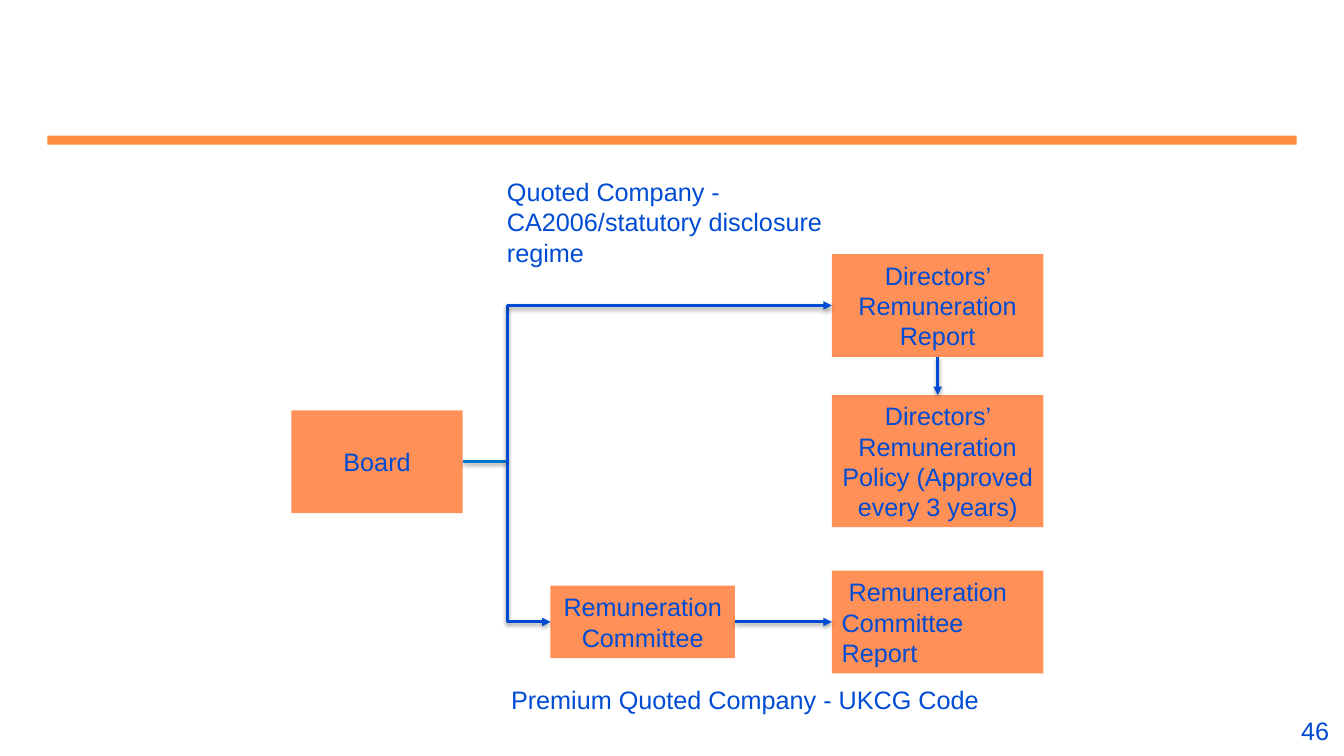
from lxml import etree
from pptx import Presentation
from pptx.dml.color import RGBColor
from pptx.enum.shapes import MSO_CONNECTOR, MSO_SHAPE
from pptx.enum.text import MSO_ANCHOR, PP_ALIGN
from pptx.oxml import parse_xml
from pptx.oxml.ns import nsdecls, qn
from pptx.util import Inches, Pt

BLUE = RGBColor(0x00, 0x4B, 0xD3)
LIGHT_BLUE = RGBColor(0x00, 0x77, 0xC8)
ORANGE = RGBColor(0xFF, 0x90, 0x57)
RULE_ORANGE = RGBColor(0xFF, 0x69, 0x00)
STRAIGHT = MSO_CONNECTOR.STRAIGHT
RECT = MSO_SHAPE.RECTANGLE
LEFT, CENTER, RIGHT = PP_ALIGN.LEFT, PP_ALIGN.CENTER, PP_ALIGN.RIGHT
TOP_SIDE, LEFT_SIDE, BOTTOM_SIDE, RIGHT_SIDE = range(4)

SHADOW = (f'<a:effectLst {nsdecls("a")}><a:outerShdw blurRad="39370" dist="20320" '
          'dir="5400000" rotWithShape="0"><a:srgbClr val="000000">'
          '<a:alpha val="38000"/></a:srgbClr></a:outerShdw></a:effectLst>')


def write(s, text, align, wrap=True):
    tf = s.text_frame
    tf.word_wrap = wrap
    p = tf.paragraphs[0]
    p.alignment = align
    r = p.add_run()
    r.text = text
    r.font.name = "Arial"
    r.font.size = Pt(18)
    r.font.color.rgb = BLUE


def add_line(start, end, color=BLUE, width=2, arrow=False, shadow=True):
    """Draw a line; each end is an (x, y) point or a (box, side) pair to join."""
    points = [(0, 0) if isinstance(e[0], str) else e for e in (start, end)]
    c = prs_slide.shapes.add_connector(
        STRAIGHT, *[Inches(v) for point in points for v in point])
    if isinstance(start[0], str):
        c.begin_connect(boxes[start[0]], start[1])
    if isinstance(end[0], str):
        c.end_connect(boxes[end[0]], end[1])
    c.line.color.rgb = color
    c.line.width = Pt(width)
    if arrow:
        etree.SubElement(c.line._get_or_add_ln(), qn("a:tailEnd"), type="triangle")
    effects = SHADOW if shadow else f'<a:effectLst {nsdecls("a")}/>'
    c._element.spPr.append(parse_xml(effects))
    return c


prs = Presentation()
prs.slide_width, prs.slide_height = Inches(13.33), Inches(7.5)
prs_slide = prs.slides.add_slide(prs.slide_layouts[6])

rule = add_line((0.47, 1.39), (12.86, 1.39), RULE_ORANGE, 6.5, shadow=False)
rule_color = rule._element.spPr.find(".//" + qn("a:srgbClr"))
etree.SubElement(rule_color, qn("a:alpha"), val="75000")

boxes = {}
for name, x, y, w, h, text, align in [
    ("board", 2.89, 4.07, 1.7, 1.02, "Board", CENTER),
    ("committee", 5.46, 5.81, 1.83, 0.72, "Remuneration Committee", CENTER),
    ("report", 8.25, 2.52, 2.1, 1.02, "Directors’ Remuneration Report", CENTER),
    ("policy", 8.25, 3.92, 2.1, 1.31,
     "Directors’ Remuneration Policy (Approved every 3 years)", CENTER),
    ("committee report", 8.25, 5.66, 2.1, 1.02,
     " Remuneration Committee Report", LEFT),
]:
    s = prs_slide.shapes.add_shape(RECT, Inches(x), Inches(y), Inches(w), Inches(h))
    s.shadow.inherit = False
    s.fill.solid()
    s.fill.fore_color.rgb = ORANGE
    s.line.fill.background()
    s.text_frame.vertical_anchor = MSO_ANCHOR.MIDDLE
    write(s, text, align)
    boxes[name] = s

# The board's line meets a vertical spine with one branch per regime
spine_x, upper_y, board_y, lower_y = 5.03, 3.03, 4.58, 6.17
add_line(("report", BOTTOM_SIDE), ("policy", TOP_SIDE), arrow=True)
add_line(("board", RIGHT_SIDE), (spine_x, board_y), LIGHT_BLUE)
add_line((spine_x, upper_y), (spine_x, lower_y))
add_line((spine_x, lower_y), ("committee", LEFT_SIDE), arrow=True)
add_line(("committee", RIGHT_SIDE), ("committee report", LEFT_SIDE), arrow=True)
add_line((spine_x, upper_y), ("report", LEFT_SIDE), arrow=True)

for x, y, w, h, text, align, wrap in [
    (4.93, 1.7, 4.06, 1.31,
     "Quoted Company - CA2006/statutory disclosure regime", LEFT, True),
    (4.97, 6.74, 4.89, 0.4, "Premium Quoted Company - UKCG Code", LEFT, False),
    (12.62, 7.05, 0.66, 0.4, "46", RIGHT, True),
]:
    s = prs_slide.shapes.add_textbox(Inches(x), Inches(y), Inches(w), Inches(h))
    write(s, text, align, wrap)

prs.save("out.pptx")
